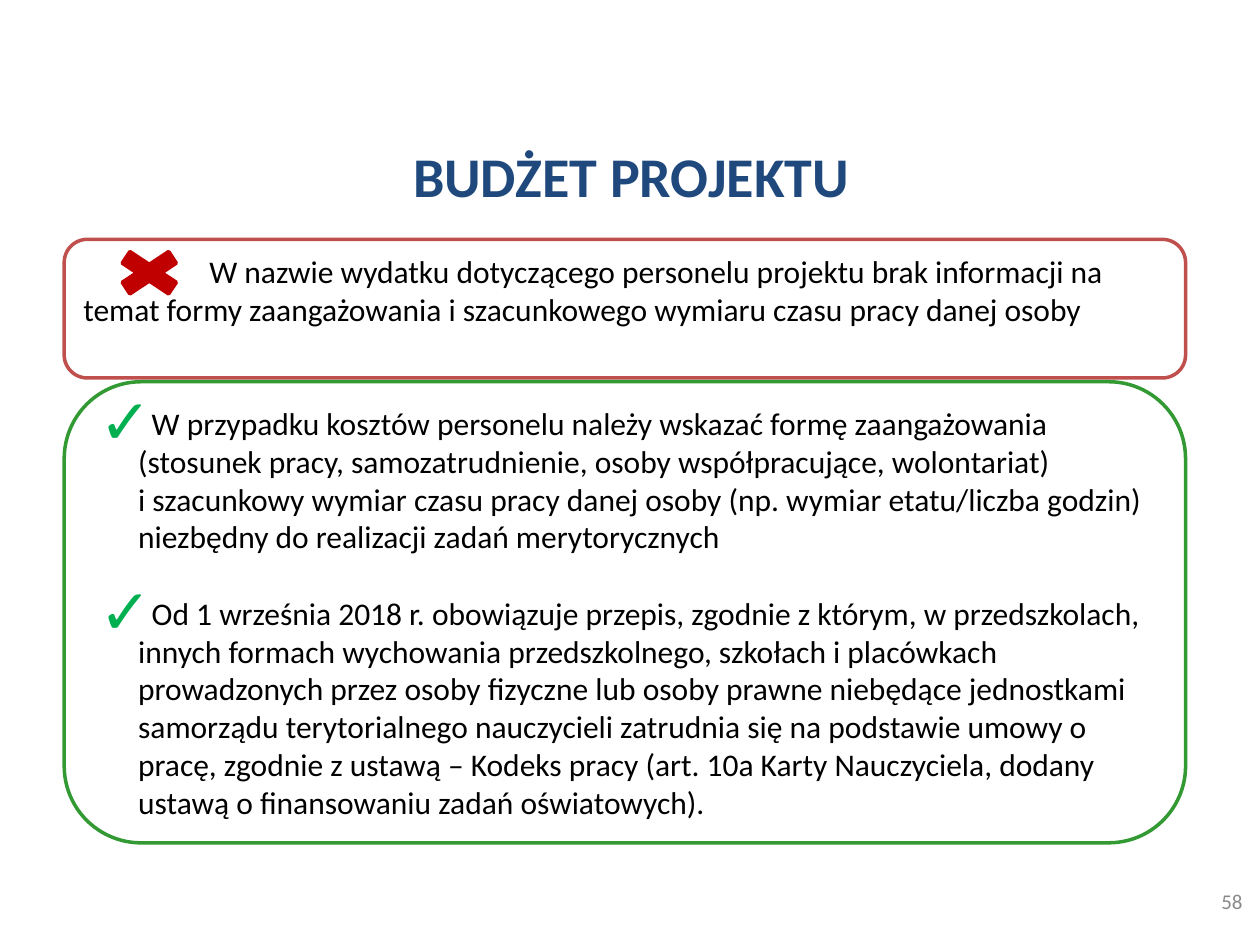
from dataclasses import dataclass

from lxml import etree
from pptx import Presentation, util as u
from pptx.dml.color import RGBColor
from pptx.enum import shapes, text
from pptx.oxml import ns

FONT = "Calibri"
BLACK = "000000"
RED = "C00000"
LEFT, WIDTH = 0.51, 8.9


@dataclass
class Frame:
    left: float
    top: float
    width: float
    height: float

    def lengths(self) -> list:
        return [u.Inches(n) for n in (self.left, self.top, self.width, self.height)]


@dataclass
class Panel:
    frame: Frame
    line: str
    anchor: text.MSO_ANCHOR
    paragraphs: list[str]
    checked: bool


def color(value: str) -> RGBColor:
    return RGBColor.from_string(value)


def add_span(para, words: str, size: int, ink: str, bold: bool = False) -> None:
    span = para.add_run()
    span.text = words
    span.font.name = FONT
    span.font.size = u.Pt(size)
    span.font.bold = bold
    span.font.color.rgb = color(ink)


def add_check(para) -> None:
    properties = para._p.get_or_add_pPr()
    properties.set("marL", str(u.Inches(0.31)))
    properties.set("indent", str(u.Inches(-0.31)))
    bullet_color = etree.SubElement(properties, ns.qn("a:buClr"))
    etree.SubElement(bullet_color, ns.qn("a:srgbClr"), val="00B050")
    etree.SubElement(properties, ns.qn("a:buSzPct"), val="200000")
    etree.SubElement(properties, ns.qn("a:buFont"), typeface=FONT)
    etree.SubElement(properties, ns.qn("a:buChar"), char="✓")


def add_tab_stop(para) -> None:
    tabs = etree.SubElement(para._p.get_or_add_pPr(), ns.qn("a:tabLst"))
    etree.SubElement(tabs, ns.qn("a:tab"), pos=str(u.Inches(1)), algn="l")


def add_outlined(page, kind, frame: Frame, line: str):
    shape = page.shapes.add_shape(kind, *frame.lengths())
    shape.shadow.inherit = False
    shape.line.color.rgb = color(line)
    shape.line.width = u.Pt(2)
    return shape


def add_panel(page, panel: Panel) -> None:
    box = add_outlined(
        page, shapes.MSO_SHAPE.ROUNDED_RECTANGLE, panel.frame, panel.line
    )
    box.fill.background()
    body = box.text_frame
    body.word_wrap = True
    body.vertical_anchor = panel.anchor
    for index, words in enumerate(panel.paragraphs):
        para = body.add_paragraph() if index else body.paragraphs[0]
        para.alignment = text.PP_ALIGN.LEFT
        if index:
            para.space_before = u.Pt(22)
        if panel.checked:
            add_check(para)
        else:
            add_tab_stop(para)
        for number, part in enumerate(words.split("\n")):
            if number:
                para.add_line_break()
            add_span(para, part, 18, BLACK)


def add_title(page) -> None:
    title = page.shapes.title
    title.left, title.top, title.width, title.height = Frame(
        LEFT, 1.15, 9, 0.48
    ).lengths()
    title.text_frame.vertical_anchor = text.MSO_ANCHOR.MIDDLE
    para = title.text_frame.paragraphs[0]
    para.alignment = text.PP_ALIGN.CENTER
    add_span(para, "BUDŻET PROJEKTU", 32, "1F497D", bold=True)


def add_page_number(page) -> None:
    box = page.shapes.add_textbox(*Frame(7.63, 6.95, 2.33, 0.4).lengths())
    box.text_frame.word_wrap = True
    box.text_frame.vertical_anchor = text.MSO_ANCHOR.MIDDLE
    para = box.text_frame.paragraphs[0]
    para.alignment = text.PP_ALIGN.RIGHT
    add_span(para, "58", 12, "898989")


PANELS = [
    Panel(
        Frame(LEFT, 1.9, WIDTH, 1.1),
        "C0504D",
        text.MSO_ANCHOR.TOP,
        [
            "\tW nazwie wydatku dotyczącego personelu projektu brak informacji "
            "na temat formy zaangażowania i szacunkowego wymiaru czasu pracy "
            "danej osoby"
        ],
        checked=False,
    ),
    Panel(
        Frame(LEFT, 3.03, WIDTH, 3.66),
        "339933",
        text.MSO_ANCHOR.MIDDLE,
        [
            "W przypadku kosztów personelu należy wskazać formę zaangażowania "
            "(stosunek pracy, samozatrudnienie, osoby współpracujące, "
            "wolontariat)\ni szacunkowy wymiar czasu pracy danej osoby "
            "(np. wymiar etatu/liczba godzin) niezbędny do realizacji zadań "
            "merytorycznych",
            "Od 1 września 2018 r. obowiązuje przepis, zgodnie z którym, "
            "w przedszkolach, innych formach wychowania przedszkolnego, "
            "szkołach i placówkach prowadzonych przez osoby fizyczne lub osoby "
            "prawne niebędące jednostkami samorządu terytorialnego nauczycieli "
            "zatrudnia się na podstawie umowy o pracę, zgodnie z ustawą – "
            "Kodeks pracy (art. 10a Karty Nauczyciela, dodany ustawą "
            "o finansowaniu zadań oświatowych).",
        ],
        checked=True,
    ),
]


def main() -> None:
    deck = Presentation()
    deck.slide_width, deck.slide_height = u.Inches(10), u.Inches(7.5)
    page = deck.slides.add_slide(deck.slide_layouts[5])
    add_title(page)
    for panel in PANELS:
        add_panel(page, panel)
    cross = add_outlined(
        page, shapes.MSO_SHAPE.MATH_MULTIPLY, Frame(0.83, 1.93, 0.71, 0.47), RED
    )
    cross.fill.solid()
    cross.fill.fore_color.rgb = color(RED)
    add_page_number(page)
    deck.save("out.pptx")


if __name__ == "__main__":
    main()
